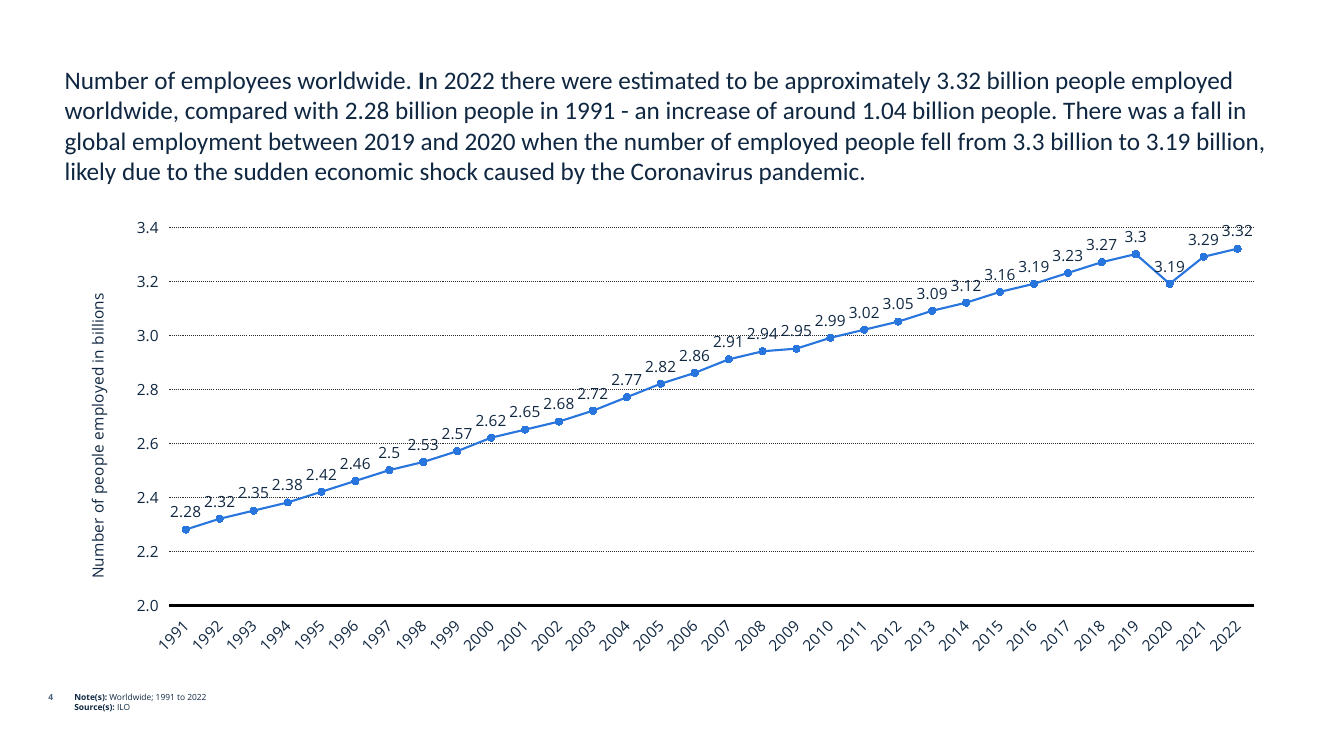
from lxml import etree
from pptx import Presentation
from pptx import util as u
from pptx.chart.data import CategoryChartData
from pptx.dml.color import RGBColor
from pptx.enum import chart as ch, dml, text
from pptx.oxml.ns import qn

Pt = u.Pt
NAVY, SLATE, BLUE = "0F2741", "455F7C", "2875DD"
SANS = "Open Sans"
VALS = [2.28, 2.32, 2.35, 2.38, 2.42, 2.46, 2.5, 2.53,
        2.57, 2.62, 2.65, 2.68, 2.72, 2.77, 2.82, 2.86,
        2.91, 2.94, 2.95, 2.99, 3.02, 3.05, 3.09, 3.12,
        3.16, 3.19, 3.23, 3.27, 3.3, 3.19, 3.29, 3.32]


def rgb(code):
    return RGBColor.from_string(code)


def put(item, fmt):
    for key, val in fmt.items():
        setattr(item, key, val)


def style(font, size, name=SANS, color=NAVY, bold=False):
    put(font, {"size": Pt(size), "name": name, "bold": bold})
    font.color.rgb = rgb(color)


def add_text(slide, box, paras, size, name=SANS, color=NAVY, **fmt):
    """Each paragraph is a list of (words, bold) runs."""
    frame = slide.shapes.add_textbox(*map(Pt, box)).text_frame
    put(frame, {"word_wrap": True, **fmt})
    for i, runs in enumerate(paras):
        para = frame.add_paragraph() if i else frame.paragraphs[0]
        for words, bold in runs:
            run = para.add_run()
            run.text = words
            style(run.font, size, name, color, bold)
    return frame


def set_line(line, color, width, dash=None):
    line.color.rgb = rgb(color)
    put(line, {"width": Pt(width), "dash_style": dash})


def set_plot_area(chart, **sides):
    """Fix the inner plot area as fractions of the chart."""
    area = chart.plots[0]._element.getparent()
    for old in area.findall(qn("c:layout")):
        area.remove(old)
    layout = etree.Element(qn("c:layout"))
    area.insert(0, layout)
    manual = etree.SubElement(layout, qn("c:manualLayout"))
    tags = {"layoutTarget": "inner", "xMode": "edge", "yMode": "edge", **sides}
    for tag, val in tags.items():
        etree.SubElement(manual, qn("c:" + tag)).set("val", str(val))


def set_axis(axis):
    put(axis, {"major_tick_mark": ch.XL_TICK_MARK.NONE,
               "minor_tick_mark": ch.XL_TICK_MARK.NONE,
               "tick_label_position": ch.XL_TICK_LABEL_POSITION.LOW})
    style(axis.tick_labels.font, 11)


def add_line_chart(slide, box, cats, vals, title):
    data = CategoryChartData()
    data.categories = cats
    data.add_series("Series 1", vals)
    chart = slide.shapes.add_chart(
        ch.XL_CHART_TYPE.LINE_MARKERS, *map(Pt, box), data).chart
    put(chart, {"has_legend": False, "has_title": False})
    style(chart.font, 8, "Calibri", "000000")
    set_plot_area(chart, x=0.086, y=0.042, w=0.894, h=0.826)

    # Year axis, with slanted labels
    years = chart.category_axis
    set_axis(years)
    set_line(years.format.line, "000000", 2)
    years.has_major_gridlines = False
    body = years._element.find(qn("c:txPr")).find(qn("a:bodyPr"))
    body.set("rot", str(-45 * 60000))

    # Value axis, with dotted grid
    scale = chart.value_axis
    set_axis(scale)
    put(scale, {"minimum_scale": 2, "maximum_scale": 3.4, "major_unit": 0.2})
    put(scale.tick_labels, {"number_format": "#,##0.0",
                            "number_format_is_linked": False})
    scale.format.line.fill.background()
    set_line(scale.major_gridlines.format.line, "2F2F2F", 0.75,
             dml.MSO_LINE.ROUND_DOT)
    frame = scale.axis_title.text_frame
    frame.text = title
    style(frame.paragraphs[0].runs[0].font, 11)

    # Line, markers and value labels
    plot = chart.plots[0]
    plot.vary_by_categories = False
    line = plot.series[0]
    line.smooth = False
    set_line(line.format.line, BLUE, 1.5)
    mark = line.marker
    put(mark, {"style": ch.XL_MARKER_STYLE.CIRCLE, "size": 5})
    mark.format.fill.solid()
    mark.format.fill.fore_color.rgb = rgb(BLUE)
    mark.format.line.color.rgb = rgb(BLUE)
    labels = line.data_labels
    put(labels, {"show_value": True, "number_format": "General",
                 "number_format_is_linked": False,
                 "position": ch.XL_LABEL_POSITION.ABOVE})
    style(labels.font, 11)


def main():
    deck = Presentation()
    put(deck, {"slide_width": Pt(960), "slide_height": Pt(540)})
    slide = deck.slides.add_slide(deck.slide_layouts[6])

    # Notes and sources
    add_text(slide, (46, 490.5, 754, 42), [
        [("Note(s): ", True), ("Worldwide; 1991 to 2022", False)],
        [("Source(s): ", True), ("ILO", False)]], 6)

    # Employment by year
    add_line_chart(slide, (46, 148.5, 867.5, 327),
                   [str(y) for y in range(1991, 2023)], VALS,
                   "Number of people employed in billions")

    # Page number
    page = add_text(slide, (-7, 490.5, 52, 21.5), [[("4", True)]], 6,
                    color=SLATE)
    page.paragraphs[0].alignment = text.PP_ALIGN.RIGHT

    # Heading
    add_text(slide, (39, 33, 881.5, 103), [[
        ("Number of employees worldwide. ", False), ("I", True),
        ("n 2022 there were estimated to be approximately 3.32 billion people "
         "employed worldwide, compared with 2.28 billion people in 1991 - an "
         "increase of around 1.04 billion people. There was a fall in global "
         "employment between 2019 and 2020 when the number of employed people "
         "fell from 3.3 billion to 3.19 billion, likely due to the sudden "
         "economic shock caused by the Coronavirus pandemic.", False)]],
        18, "Calibri", vertical_anchor=text.MSO_ANCHOR.BOTTOM)

    deck.save("out.pptx")


if __name__ == "__main__":
    main()
